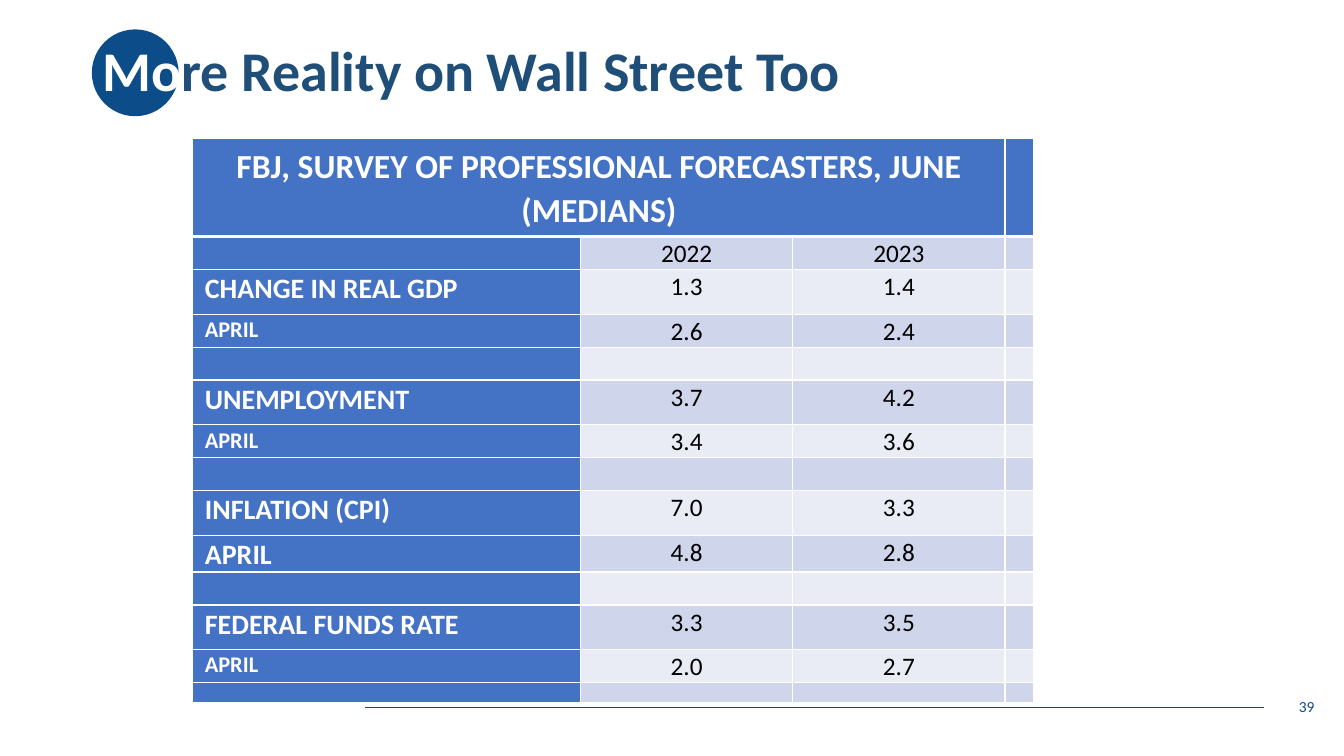
from lxml import etree
from pptx import Presentation
from pptx.dml.color import RGBColor
from pptx.enum.shapes import MSO_CONNECTOR, MSO_SHAPE
from pptx.enum.text import MSO_ANCHOR, MSO_AUTO_SIZE, PP_ALIGN
from pptx.oxml.ns import qn
from pptx.util import Pt

LEFT, CENTER, RIGHT = PP_ALIGN.LEFT, PP_ALIGN.CENTER, PP_ALIGN.RIGHT
MIDDLE = MSO_ANCHOR.MIDDLE
NAVY, WHITE, BLACK = "0C4C88", "FFFFFF", "000000"
HEADER_BLUE = "4472C4"
BANDS = ["E9EBF5", "CFD5EA"]


def color(hex_string):
    return RGBColor.from_string(hex_string)


def style(paragraph, size, hex_string, bold, align, spacing):
    paragraph.alignment = align
    paragraph.line_spacing = spacing
    font = paragraph.font
    font.name, font.size, font.bold = "Calibri", Pt(size), bold
    font.color.rgb = color(hex_string)


prs = Presentation()
prs.slide_width, prs.slide_height = Pt(960), Pt(540)
slide = prs.slides.add_slide(prs.slide_layouts[5])
shapes = slide.shapes

# Footer rule and title disc
footer_rule = shapes.add_connector(
    MSO_CONNECTOR.STRAIGHT, Pt(260.6), Pt(505), Pt(903), Pt(505))
footer_rule.line.color.rgb = color(NAVY)
footer_rule.line.width = Pt(0.5)
etree.SubElement(footer_rule._element.spPr, qn("a:effectLst"))

disc = shapes.add_shape(MSO_SHAPE.OVAL, Pt(65.6), Pt(21), Pt(62), Pt(62))
disc.shadow.inherit = False
disc.fill.solid()
disc.fill.fore_color.rgb = color(NAVY)
disc.line.fill.background()

# Title, brought in front of the disc
title = shapes.title
shapes._spTree.append(title._element)
title.left, title.top, title.width, title.height = Pt(66.2), Pt(0), Pt(828), Pt(104.4)
title_frame = title.text_frame
title_frame.vertical_anchor = MIDDLE
title_frame.auto_size = MSO_AUTO_SIZE.NONE
heading = title_frame.paragraphs[0]
style(heading, 40, "1F4E79", True, LEFT, 0.9)
for part, part_color in [("Mo", WHITE), ("re Reality on Wall Street Too", "1F4E79")]:
    run = heading.add_run()
    run.text = part
    run.font.color.rgb = color(part_color)

# Slide number
number_box = shapes.add_textbox(Pt(730), Pt(490.3), Pt(216), Pt(28.8))
number_frame = number_box.text_frame
number_frame.word_wrap = True
number_frame.vertical_anchor = MIDDLE
number_frame.text = "39"
style(number_frame.paragraphs[0], 11, NAVY, False, RIGHT, 1)

# Forecast table: label, label size, 2022, 2023, row height
SPACER = ("", 18, "", "", 23.5)
forecasts = [
    ("", 18, "2022", "2023", 23.5),
    ("CHANGE IN REAL GDP", 20, "1.3", "1.4", 32),
    ("APRIL", 16, "2.6", "2.4", 23.5),
    SPACER,
    ("UNEMPLOYMENT", 20, "3.7", "4.2", 32),
    ("APRIL", 16, "3.4", "3.6", 23.5),
    SPACER,
    ("INFLATION (CPI)", 20, "7.0", "3.3", 32),
    ("APRIL", 20, "4.8", "2.8", 26.2),
    SPACER,
    ("FEDERAL FUNDS RATE", 20, "3.3", "3.5", 32),
    ("APRIL", 16, "2.0", "2.7", 23.5),
    ("", 10, "", "", 14),
]
column_widths = [277, 151.6, 151.6, 20.5]
HEADER_HEIGHT = 70
table = shapes.add_table(
    len(forecasts) + 1, len(column_widths), Pt(137.7), Pt(99), Pt(sum(column_widths)),
    Pt(HEADER_HEIGHT + sum(row[-1] for row in forecasts))).table
table.first_col = True
for column, width in zip(table.columns, column_widths):
    column.width = Pt(width)

table.rows[0].height = Pt(HEADER_HEIGHT)
survey = table.cell(0, 0)
survey.merge(table.cell(0, 2))
survey.text = "FBJ, SURVEY OF PROFESSIONAL FORECASTERS, JUNE\n(MEDIANS)"
for paragraph in survey.text_frame.paragraphs:
    style(paragraph, 24, WHITE, True, CENTER, 1.07)
for cell in table.rows[0].cells:
    cell_properties = cell._tc.get_or_add_tcPr()
    for side, points in [("lnL", 1), ("lnR", 1), ("lnT", 1), ("lnB", 3)]:
        border = etree.SubElement(cell_properties, qn(f"a:{side}"), w=str(Pt(points)))
        border_fill = etree.SubElement(border, qn("a:solidFill"))
        etree.SubElement(border_fill, qn("a:srgbClr"), val=WHITE)
    cell.fill.solid()
    cell.fill.fore_color.rgb = color(HEADER_BLUE)

for r, (label, label_size, this_year, next_year, height) in enumerate(forecasts, 1):
    table.rows[r].height = Pt(height)
    for c, text in enumerate([label, this_year, next_year, ""]):
        cell = table.cell(r, c)
        is_label = c == 0
        cell.fill.solid()
        cell.fill.fore_color.rgb = color(HEADER_BLUE if is_label else BANDS[r % 2])
        cell.margin_left = cell.margin_right = Pt(8.64)
        cell.margin_top = cell.margin_bottom = Pt(0)
        cell.text = text
        paragraph = cell.text_frame.paragraphs[0]
        if not text:
            # An empty cell takes its line height from the end mark
            etree.SubElement(paragraph._p, qn("a:endParaRPr"), sz=str(label_size * 100))
        elif is_label:
            style(paragraph, label_size, WHITE, True, LEFT, 1.07)
        else:
            style(paragraph, 18, BLACK, False, CENTER, 1.07)

prs.save("out.pptx")
